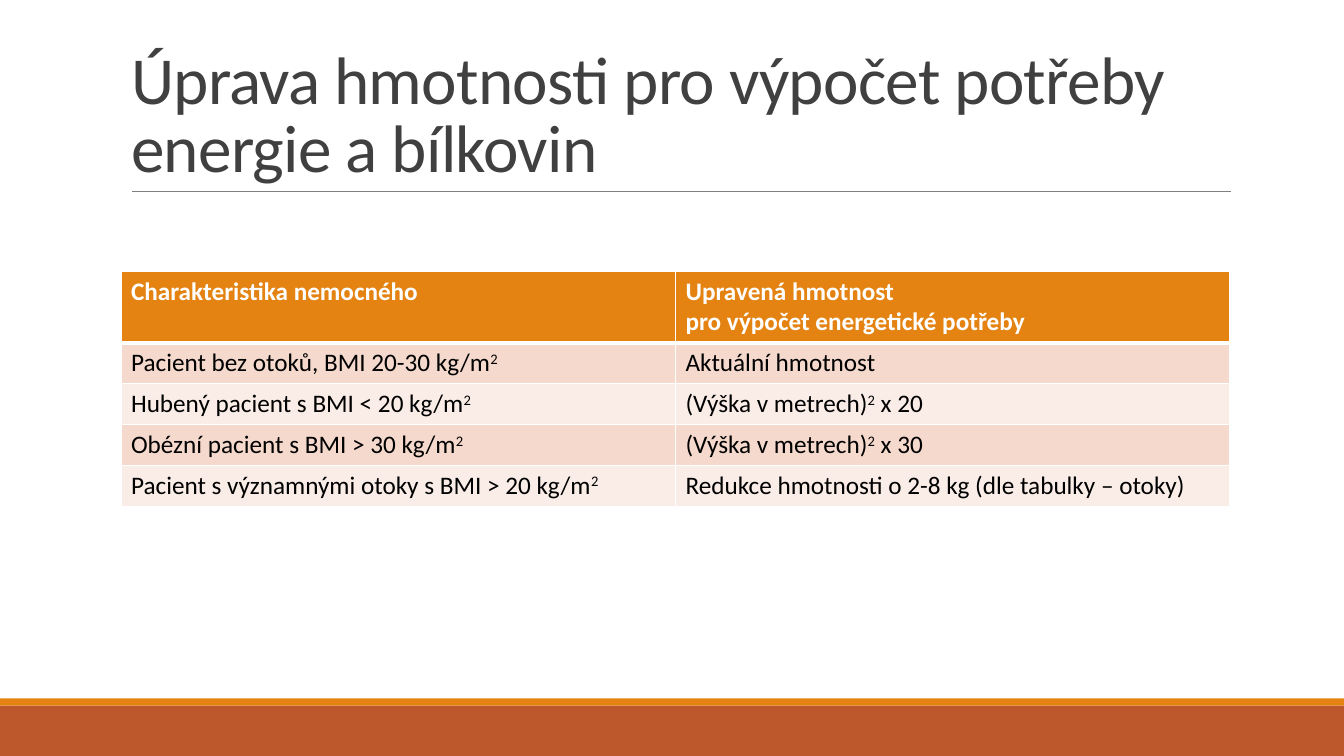
"""Builds the slide on adjusting body weight for energy and protein needs."""
from dataclasses import dataclass

from lxml import etree
from pptx import Presentation
from pptx.dml.color import RGBColor
from pptx.enum import shapes, text
from pptx.oxml import ns
from pptx.util import Inches, Pt

TITLE = "Úprava hmotnosti pro výpočet potřeby energie a bílkovin"
ROWS = [
    ("Charakteristika nemocného", "Upravená hmotnost\npro výpočet energetické potřeby"),
    ("Pacient bez otoků, BMI 20-30 kg/m|2", "Aktuální hmotnost"),
    ("Hubený pacient s BMI < 20 kg/m|2", "(Výška v metrech)|2| x 20"),
    ("Obézní pacient s BMI > 30 kg/m|2", "(Výška v metrech)|2| x 30"),
    ("Pacient s významnými otoky s BMI > 20 kg/m|2",
     "Redukce hmotnosti o 2-8 kg (dle tabulky – otoky)"),
]


@dataclass(frozen=True)
class Theme:
    """Colours, font and type sizes of the slide."""
    font: str = "Calibri"
    title: str = "404040"
    rule: str = "808080"
    head: str = "E48312"
    foot: str = "BD582C"
    light: str = "FFFFFF"
    dark: str = "000000"
    bands: tuple = ("FAEDE7", "F5D9CC")
    big: int = 48
    small: int = 18


LOOK = Theme()
WIDE, HIGH = 13.33, 7.5
LEFT, SPAN = 1.2, 11
TOP, HEAD, ROW = 2.69, 0.7, 0.405


def rgb(code):
    """Turn a hex code into a colour."""
    return RGBColor.from_string(code)


def style(run, size, color, bold=False):
    """Set the font of a run."""
    font = run.font
    font.name, font.size, font.bold = LOOK.font, Pt(size), bold
    font.color.rgb = rgb(color)


def add_bar(slide, top, high, color):
    """Add a full-width bar."""
    bar = slide.shapes.add_shape(
        shapes.MSO_SHAPE.RECTANGLE, 0, Inches(top), Inches(WIDE), Inches(high))
    bar.shadow.inherit = False
    bar.fill.solid()
    bar.fill.fore_color.rgb = rgb(color)
    bar.line.fill.background()


def add_rule(slide):
    """Add the thin line below the title."""
    line = slide.shapes.add_connector(
        shapes.MSO_CONNECTOR.STRAIGHT, Inches(1.31), Inches(1.9), Inches(12.21), Inches(1.9))
    line.line.color.rgb = rgb(LOOK.rule)
    line.line.width = Pt(0.5)
    etree.SubElement(line._element.spPr, ns.qn("a:effectLst"))


def add_title(slide):
    """Fill and place the title."""
    title = slide.shapes.title
    title.left, title.top = Inches(LEFT), Inches(0.31)
    title.width, title.height = Inches(SPAN), Inches(1.59)
    frame = title.text_frame
    frame.text = TITLE
    frame.word_wrap = True
    frame.auto_size = text.MSO_AUTO_SIZE.NONE
    frame.vertical_anchor = text.MSO_ANCHOR.BOTTOM
    para = frame.paragraphs[0]
    para.alignment = text.PP_ALIGN.LEFT
    para.line_spacing = 0.85
    run = para.runs[0]
    style(run, LOOK.big, LOOK.title)
    run._r.get_or_add_rPr().set("spc", "-50")


def add_edges(cell, base):
    """Draw the four white borders of a cell."""
    props = cell._tc.get_or_add_tcPr()
    widths = {"lnL": 1, "lnR": 1, "lnT": 1, "lnB": base}
    for spot, (tag, width) in enumerate(widths.items()):
        edge = etree.Element(ns.qn("a:" + tag), w=str(Pt(width)))
        fill = etree.SubElement(edge, ns.qn("a:solidFill"))
        etree.SubElement(fill, ns.qn("a:srgbClr"), val=LOOK.light)
        props.insert(spot, edge)


def fill_cell(cell, words, row):
    """Write a cell, raising every second part between bars."""
    head = row == 0
    cell.fill.solid()
    cell.fill.fore_color.rgb = rgb(LOOK.head if head else LOOK.bands[row % 2])
    add_edges(cell, 3 if head else 1)
    frame = cell.text_frame
    frame.text = "\n".join([""] * len(words.split("\n")))
    for para, line in zip(frame.paragraphs, words.split("\n")):
        for spot, part in enumerate(line.split("|")):
            run = para.add_run()
            run.text = part
            style(run, LOOK.small, LOOK.light if head else LOOK.dark, head)
            if spot % 2:
                run._r.get_or_add_rPr().set("baseline", "30000")


def add_grid(slide):
    """Add the table of weights."""
    count = len(ROWS)
    grid = slide.shapes.add_table(
        count, 2, Inches(LEFT), Inches(TOP), Inches(SPAN),
        Inches(HEAD + ROW * (count - 1))).table
    for row, cells in enumerate(ROWS):
        grid.rows[row].height = Inches(ROW if row else HEAD)
        for col, words in enumerate(cells):
            fill_cell(grid.cell(row, col), words, row)


def main():
    """Build and save the slide."""
    deck = Presentation()
    deck.slide_width, deck.slide_height = Inches(WIDE), Inches(HIGH)
    slide = deck.slides.add_slide(deck.slide_layouts[5])
    add_bar(slide, 7, 0.5, LOOK.foot)
    add_bar(slide, 6.93, 0.07, LOOK.head)
    add_rule(slide)
    add_title(slide)
    add_grid(slide)
    deck.save("out.pptx")


if __name__ == "__main__":
    main()
